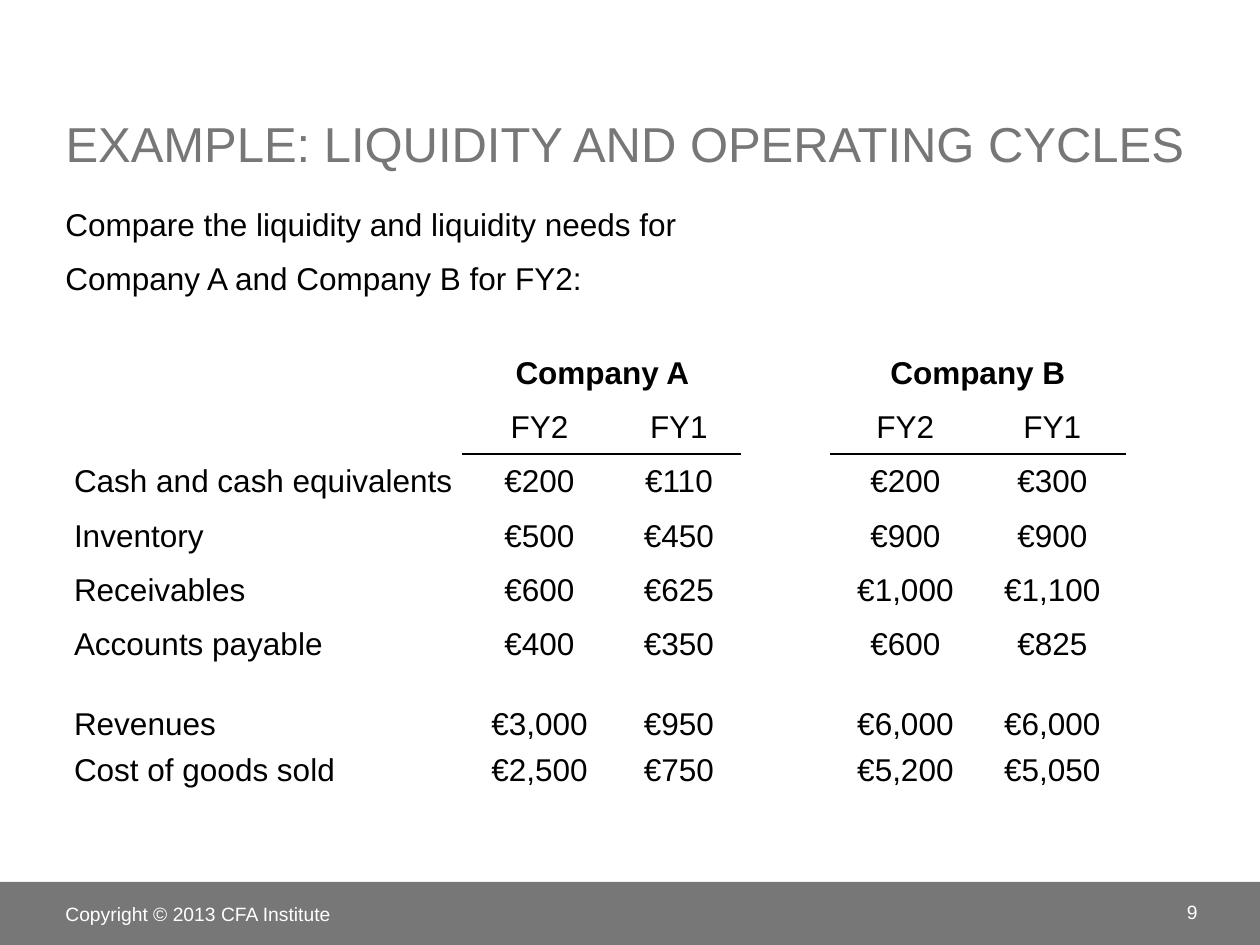
from lxml.etree import SubElement
from pptx import Presentation
from pptx.dml.color import RGBColor
from pptx.enum.shapes import MSO_SHAPE
from pptx.enum.text import MSO_ANCHOR, MSO_AUTO_SIZE, PP_ALIGN
from pptx.oxml.ns import qn
from pptx.util import Emu, Pt

SCALE = 914400 // 126
FONT = "Arial"
GREY, BLACK, WHITE = "777777", "000000", "FFFFFF"

COLS = [390, 153, 126, 89, 149, 145]
GAP = 35
ROWS = [54, 54, 55, 54, 54, 54, GAP, 37, 54]
DATA = [
    ["", "Company A", "", "", "Company B", ""],
    ["", "FY2", "FY1", "", "FY2", "FY1"],
    ["Cash and cash equivalents", "€200", "€110", "", "€200", "€300"],
    ["Inventory", "€500", "€450", "", "€900", "€900"],
    ["Receivables", "€600", "€625", "", "€1,000", "€1,100"],
    ["Accounts payable", "€400", "€350", "", "€600", "€825"],
    [""] * 6,
    ["Revenues", "€3,000", "€950", "", "€6,000", "€6,000"],
    ["Cost of goods sold", "€2,500", "€750", "", "€5,200", "€5,050"],
]


def px(num):
    return Emu(num * SCALE)


def color(code):
    return RGBColor.from_string(code)


def place(shape, left, top, width, height):
    shape.left, shape.top = px(left), px(top)
    shape.width, shape.height = px(width), px(height)


def add_run(para, text, size, code, bold=False):
    run = para.add_run()
    run.text = text
    font = run.font
    font.name, font.size, font.bold = FONT, Pt(size), bold
    font.color.rgb = color(code)


def fill_text(shape, lines, size, code, anchor=MSO_ANCHOR.TOP,
              align=PP_ALIGN.LEFT):
    frame = shape.text_frame
    frame.word_wrap = True
    frame.auto_size = MSO_AUTO_SIZE.NONE
    frame.vertical_anchor = anchor
    for num, line in enumerate(lines):
        para = frame.add_paragraph() if num else frame.paragraphs[0]
        para.alignment = align
        if num:
            para.space_before = Pt(9)
        add_run(para, line, size, code)


def add_text(slide, box, *args, **opts):
    shape = slide.shapes.add_textbox(*map(px, box))
    fill_text(shape, *args, **opts)


def add_band(slide, box, code):
    band = slide.shapes.add_shape(MSO_SHAPE.RECTANGLE, *map(px, box))
    band.shadow.inherit = False
    band.fill.solid()
    band.fill.fore_color.rgb = color(code)
    band.line.fill.background()


def edge(cell, side, code):
    line = SubElement(cell._tc.get_or_add_tcPr(), qn(f"a:ln{side}"),
                      w=str(Pt(1)))
    fill = SubElement(line, qn("a:solidFill"))
    SubElement(fill, qn("a:srgbClr"), val=code)


def fill_cell(cell, row, col):
    """Set the text and edges of a cell; a rule runs below the years."""
    cell.margin_left = cell.margin_right = cell.margin_top = px(1)
    cell.margin_bottom = 0
    cell.vertical_anchor = MSO_ANCHOR.MIDDLE
    ruled = col not in (0, 3)
    codes = {"L": WHITE, "R": WHITE,
             "T": BLACK if ruled and row == 2 else WHITE,
             "B": BLACK if ruled and row == 1 else WHITE}
    for side, code in codes.items():
        edge(cell, side, code)
    cell.fill.background()
    para = cell.text_frame.paragraphs[0]
    para.alignment = PP_ALIGN.CENTER if col else PP_ALIGN.LEFT
    text = DATA[row][col]
    if text:
        add_run(para, text, 18, BLACK, bold=row == 0)
    else:
        SubElement(para._p, qn("a:endParaRPr"), sz="1200")


def add_grid(slide, left, top):
    frame = slide.shapes.add_table(len(ROWS), len(COLS), px(left), px(top),
                                   px(sum(COLS)), px(sum(ROWS)))
    table = frame.table
    table.first_row = table.horz_banding = False
    for col, width in zip(table.columns, COLS):
        col.width = px(width)
    for row, height in zip(table.rows, ROWS):
        row.height = px(height)
    for row in range(len(ROWS)):
        for col in range(len(COLS)):
            fill_cell(table.cell(row, col), row, col)
    for col in (1, 4):
        table.cell(0, col).merge(table.cell(0, col + 1))


def main():
    deck = Presentation()
    deck.slide_width, deck.slide_height = px(1260), px(945)
    slide = deck.slides.add_slide(deck.slide_layouts[5])
    add_band(slide, (0, 882, 1260, 63), GREY)
    title = slide.shapes.title
    place(title, 53, 21, 1154, 158)
    fill_text(title, ["EXAMPLE: LIQUIDITY AND OPERATING CYCLES"], 28, GREY,
              anchor=MSO_ANCHOR.BOTTOM)
    add_text(slide, (53, 199, 1154, 120),
             ["Compare the liquidity and liquidity needs for",
              "Company A and Company B for FY2:"], 18, BLACK)
    add_grid(slide, 73, 346)
    add_text(slide, (53, 886, 399, 55), ["Copyright © 2013 CFA Institute"],
             11, WHITE, anchor=MSO_ANCHOR.MIDDLE)
    add_text(slide, (1102, 887, 108, 50), ["9"], 11, WHITE,
             anchor=MSO_ANCHOR.MIDDLE, align=PP_ALIGN.RIGHT)
    deck.save("out.pptx")


if __name__ == "__main__":
    main()
